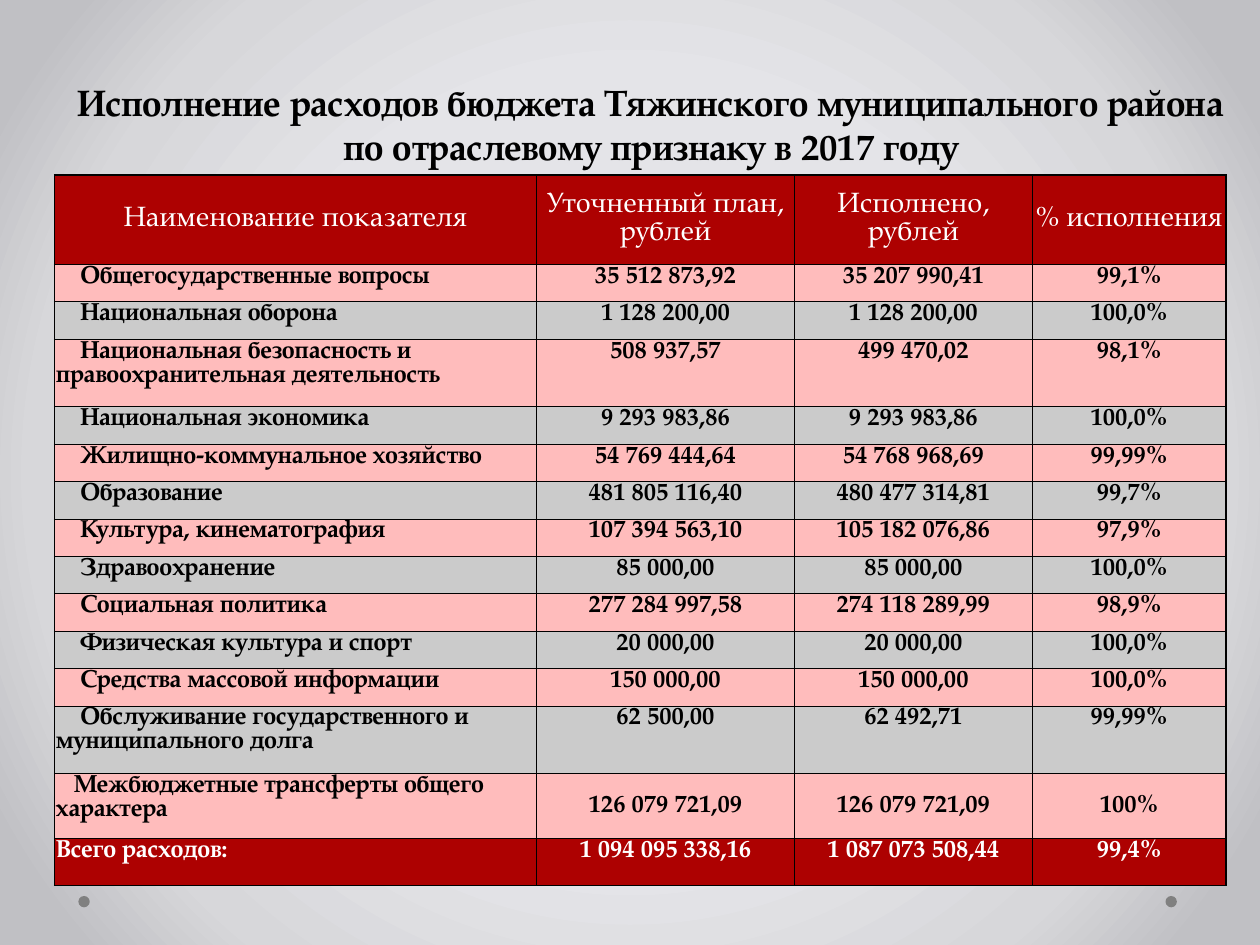
from pptx import Presentation
from pptx.dml.color import RGBColor
from pptx.enum.shapes import MSO_SHAPE as Shape
from pptx.enum.text import MSO_ANCHOR as Anchor, PP_ALIGN as Align
from pptx.oxml import parse_xml
from pptx.oxml.ns import nsdecls, qn
from pptx.util import Pt

FONT = "TeX Gyre Pagella"
BLACK, WHITE, RED, PINK, GRAY = "000000", "FFFFFF", "AD0101", "FFBCBC", "CBCBCB"
TITLE = ("Исполнение расходов бюджета Тяжинского муниципального района "
         "по отраслевому признаку в 2017 году")
ROWS = [
    ("Наименование показателя", "Уточненный план,\nрублей", "Исполнено,\nрублей", "% исполнения"),
    ("Общегосударственные вопросы", "35 512 873,92", "35 207 990,41", "99,1%"),
    ("Национальная оборона", "1 128 200,00", "1 128 200,00", "100,0%"),
    ("Национальная безопасность и правоохранительная деятельность",
     "508 937,57", "499 470,02", "98,1%"),
    ("Национальная экономика", "9 293 983,86", "9 293 983,86", "100,0%"),
    ("Жилищно-коммунальное хозяйство", "54 769 444,64", "54 768 968,69", "99,99%"),
    ("Образование", "481 805 116,40", "480 477 314,81", "99,7%"),
    ("Культура, кинематография", "107 394 563,10", "105 182 076,86", "97,9%"),
    ("Здравоохранение", "85 000,00", "85 000,00", "100,0%"),
    ("Социальная политика", "277 284 997,58", "274 118 289,99", "98,9%"),
    ("Физическая культура и спорт", "20 000,00", "20 000,00", "100,0%"),
    ("Средства массовой информации", "150 000,00", "150 000,00", "100,0%"),
    ("Обслуживание государственного и муниципального долга",
     "62 500,00", "62 492,71", "99,99%"),
    ("Межбюджетные трансферты общего характера",
     "126 079 721,09", "126 079 721,09", "100%"),
    ("Всего расходов:", "1 094 095 338,16", "1 087 073 508,44", "99,4%"),
]
LAST_ROW = len(ROWS) - 1
TRANSFERS_ROW = LAST_ROW - 1
COLUMN_WIDTHS = [275.4, 147.4, 136, 110.7]
ROW_HEIGHT = 21.4
SPECIAL_HEIGHTS = {0: 51, 3: 38.6, 12: 38.6, TRANSFERS_ROW: 37.2, LAST_ROW: 26.8}


def color(value):
    return RGBColor.from_string(value)


def write(frame, text, size=14, ink=BLACK, bold=True, align=Align.CENTER, spacing=13.7, indent=0):
    frame.word_wrap = True
    for number, line in enumerate(text.split("\n")):
        para = frame.add_paragraph() if number else frame.paragraphs[0]
        para.alignment = align
        para.line_spacing = Pt(spacing)
        if indent:
            para._p.get_or_add_pPr().set("indent", str(Pt(indent)))
        span = para.add_run()
        span.text = line
        span.font.name = FONT
        span.font.size = Pt(size)
        span.font.bold = bold
        span.font.color.rgb = color(ink)


def paint_background(page):
    page.background.fill.gradient()
    gradient = next(page.element.iter(qn("a:gradFill")))
    stops = "".join(
        f'<a:gs pos="{position * 1000}"><a:srgbClr val="{shade}"/></a:gs>'
        for position, shade in [(50, "E4E4E8"), (76, "D7D7DA"), (92, "C0C0C4")])
    gradient.getparent().replace(gradient, parse_xml(
        f'<a:gradFill rotWithShape="1" {nsdecls("a")}><a:gsLst>{stops}</a:gsLst>'
        '<a:path path="circle"><a:fillToRect l="50000" t="50000" r="50000" b="50000"/></a:path>'
        '</a:gradFill>'))


def add_dot(page, left):
    dot = page.shapes.add_shape(Shape.OVAL, Pt(left), Pt(512), Pt(6.5), Pt(6.5))
    dot.shadow.inherit = False
    dot.fill.solid()
    dot.fill.fore_color.rgb = color("808080")
    dot.line.fill.background()


def add_title(page):
    box = page.shapes.add_textbox(Pt(24), Pt(15), Pt(696), Pt(84.4))
    frame = box.text_frame
    frame.vertical_anchor = Anchor.BOTTOM
    frame.margin_left = frame.margin_right = Pt(10)
    write(frame, TITLE, size=21, spacing=25.1)


def add_borders(cell, row, column):
    outer = {"L": column == 0, "R": column == len(COLUMN_WIDTHS) - 1,
             "T": row == 0, "B": row == LAST_ROW}
    for side, is_outer in outer.items():
        width = Pt(1 if is_outer else 0.5)
        cell._tc.get_or_add_tcPr().append(parse_xml(
            f'<a:ln{side} w="{width}" {nsdecls("a")}><a:solidFill>'
            f'<a:srgbClr val="{BLACK}"/></a:solidFill></a:ln{side}>'))


def fill_cell(cell, row, column, text):
    is_header, is_total = row == 0, row == LAST_ROW
    is_name = column == 0 and not is_header
    cell.margin_left = cell.margin_right = cell.margin_top = Pt(0.72)
    cell.margin_bottom = 0
    is_middle = is_header or (row == TRANSFERS_ROW and not is_name)
    cell.vertical_anchor = Anchor.MIDDLE if is_middle else Anchor.TOP
    add_borders(cell, row, column)
    cell.fill.solid()
    band = PINK if row % 2 or row == TRANSFERS_ROW else GRAY
    cell.fill.fore_color.rgb = color(RED if is_header or is_total else band)
    indent = 0
    if is_name and not is_total:
        indent = 10.5 if row == TRANSFERS_ROW else 14
    write(cell.text_frame, text,
          size=16 if is_header else 14,
          spacing=16 if is_header else 13.7,
          ink=WHITE if is_header or is_total else BLACK,
          bold=not is_header,
          align=Align.LEFT if is_name else Align.CENTER,
          indent=indent)


def add_budget_table(page):
    heights = [SPECIAL_HEIGHTS.get(row, ROW_HEIGHT) for row in range(len(ROWS))]
    table = page.shapes.add_table(
        len(ROWS), len(COLUMN_WIDTHS), Pt(31.2), Pt(100.1),
        Pt(sum(COLUMN_WIDTHS)), Pt(sum(heights))).table
    for column, width in enumerate(COLUMN_WIDTHS):
        table.columns[column].width = Pt(width)
    for row, texts in enumerate(ROWS):
        table.rows[row].height = Pt(heights[row])
        for column, text in enumerate(texts):
            fill_cell(table.cell(row, column), row, column, text)


def main():
    deck = Presentation()
    deck.slide_width, deck.slide_height = Pt(720), Pt(540)
    page = deck.slides.add_slide(deck.slide_layouts[6])
    paint_background(page)
    for left in (666, 44.8):
        add_dot(page, left)
    add_title(page)
    add_budget_table(page)
    deck.save("out.pptx")


if __name__ == "__main__":
    main()
